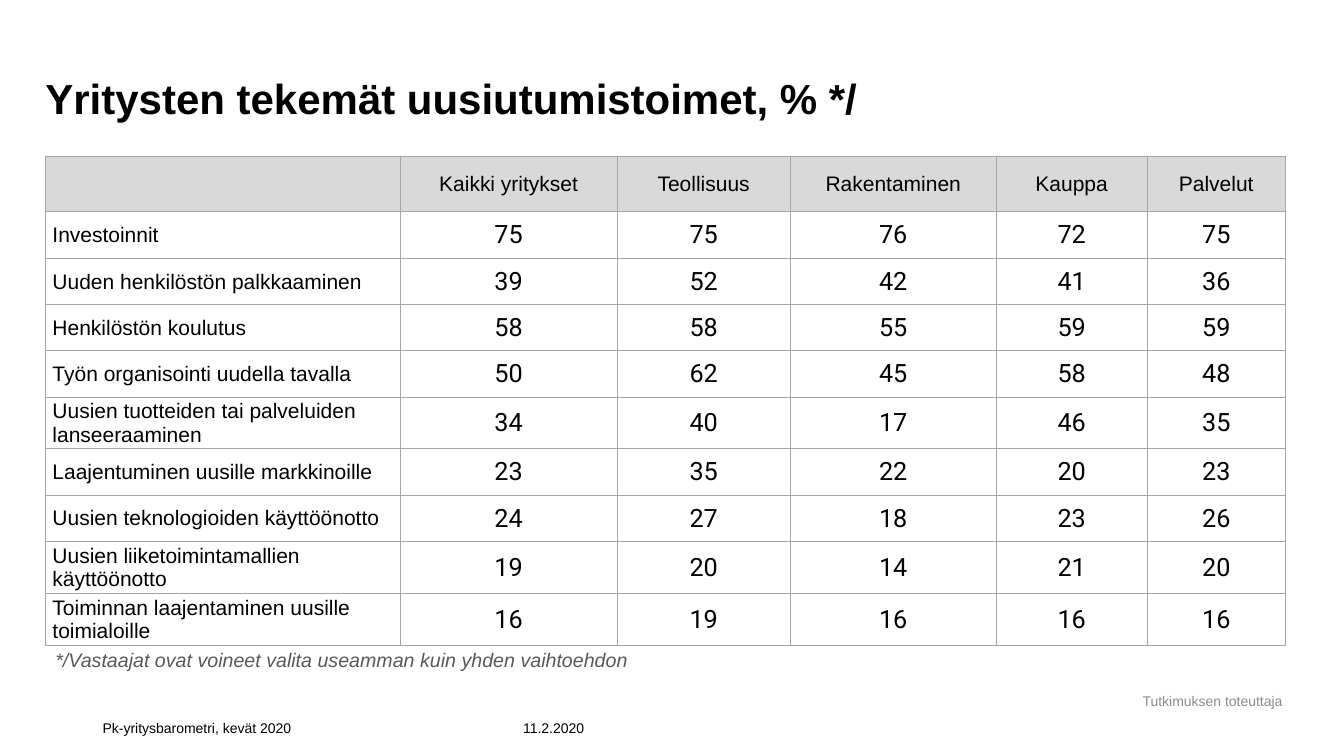
import pptx
import pptx.dml.color
import pptx.enum.text
import pptx.oxml
import pptx.oxml.ns
import pptx.util

ALIGN = pptx.enum.text.PP_ALIGN
ANCHOR = pptx.enum.text.MSO_ANCHOR
SLIDE_WIDTH = pptx.util.Inches(13.33)
SLIDE_HEIGHT = pptx.util.Inches(7.5)
MARGIN, CONTENT_WIDTH = 3.38, 92.27
FOOTER_TOP, FOOTER_HEIGHT = 93.33, 4.67

COLUMN_SHARES = [3.52, 2.15, 1.72, 2.04, 1.5, 1.37]
ROW_SHARES = [0.55] + [0.46] * 7 + [0.52, 0.46]
SECTORS = ["Kaikki yritykset", "Teollisuus", "Rakentaminen", "Kauppa", "Palvelut"]
ACTIONS = [
    ("Investoinnit", [75, 75, 76, 72, 75]),
    ("Uuden henkilöstön palkkaaminen", [39, 52, 42, 41, 36]),
    ("Henkilöstön koulutus", [58, 58, 55, 59, 59]),
    ("Työn organisointi uudella tavalla", [50, 62, 45, 58, 48]),
    ("Uusien tuotteiden tai palveluiden\nlanseeraaminen", [34, 40, 17, 46, 35]),
    ("Laajentuminen uusille markkinoille", [23, 35, 22, 20, 23]),
    ("Uusien teknologioiden käyttöönotto", [24, 27, 18, 23, 26]),
    ("Uusien liiketoimintamallien\nkäyttöönotto", [19, 20, 14, 21, 20]),
    ("Toiminnan laajentaminen uusille\ntoimialoille", [16, 19, 16, 16, 16]),
]

LABEL = {"size": 15}
FIGURE = {"size": 18, "name": "Roboto"}
SMALL = {"size": 10}


def color(value):
    return pptx.dml.color.RGBColor.from_string(value)


def place(left, top, width, height):
    return (
        round(SLIDE_WIDTH * left / 100),
        round(SLIDE_HEIGHT * top / 100),
        round(SLIDE_WIDTH * width / 100),
        round(SLIDE_HEIGHT * height / 100),
    )


def write(frame, text, look, align=ALIGN.LEFT, ink="000000"):
    frame.text = text
    for para in frame.paragraphs:
        para.alignment = align
        for span in para.runs:
            for key, value in {"name": "Arial", **look}.items():
                setattr(span.font, key, pptx.util.Pt(value) if key == "size" else value)
            span.font.color.rgb = color(ink)


def add_text(page, box, text, look, anchor, align=ALIGN.LEFT, ink="000000", wrap=True, inset=None):
    frame = page.shapes.add_textbox(*place(*box)).text_frame
    frame.word_wrap = wrap
    frame.vertical_anchor = anchor
    if inset is not None:
        for side in ("left", "top", "right", "bottom"):
            setattr(frame, f"margin_{side}", pptx.util.Inches(inset))
    write(frame, text, look, align, ink)


def add_borders(cell):
    properties = cell._tc.get_or_add_tcPr()
    for index, side in enumerate(("lnL", "lnR", "lnT", "lnB")):
        line = pptx.oxml.parse_xml(
            f'<a:{side} {pptx.oxml.ns.nsdecls("a")} w="6350"><a:solidFill>'
            f'<a:srgbClr val="A6A6A6"/></a:solidFill></a:{side}>'
        )
        properties.insert(index, line)


def fill_cell(cell, text, look, align, background):
    cell.fill.solid()
    cell.fill.fore_color.rgb = color(background)
    cell.vertical_anchor = ANCHOR.MIDDLE
    left = 0.07 if align == ALIGN.LEFT else 0.01
    for side, inset in {"left": left, "top": 0.01, "right": 0.01, "bottom": 0}.items():
        setattr(cell, f"margin_{side}", pptx.util.Inches(inset))
    write(cell.text_frame, text, look, align)
    add_borders(cell)


def add_action_table(page, box):
    left, top, width, height = place(*box)
    table = page.shapes.add_table(
        len(ROW_SHARES), len(COLUMN_SHARES), left, top, width, height
    ).table
    for column, share in zip(table.columns, COLUMN_SHARES):
        column.width = round(width * share / sum(COLUMN_SHARES))
    for row, share in zip(table.rows, ROW_SHARES):
        row.height = round(height * share / sum(ROW_SHARES))
    for row_index, (label, entries) in enumerate([("", SECTORS)] + ACTIONS):
        header = row_index == 0
        background = "D9D9D9" if header else "FFFFFF"
        fill_cell(table.cell(row_index, 0), label, LABEL, ALIGN.LEFT, background)
        for column_index, entry in enumerate(entries, 1):
            fill_cell(
                table.cell(row_index, column_index), str(entry),
                LABEL if header else FIGURE, ALIGN.CENTER, background,
            )


def add_footer(page, top, height):
    add_text(page, (6.9, top, 31.28, height), "Pk-yritysbarometri, kevät 2020", SMALL, ANCHOR.BOTTOM)
    add_text(page, (38.18, top, 6.53, height), "11.2.2020", SMALL, ANCHOR.BOTTOM)
    add_text(page, (83.72, top - 2.4, 12.98, 3.47), "Tutkimuksen toteuttaja", SMALL,
             ANCHOR.MIDDLE, ALIGN.CENTER, "8C8C8C")


def build_survey_page(deck):
    page = deck.slides.add_slide(deck.slide_layouts[6])
    add_text(page, (MARGIN, 0, CONTENT_WIDTH, 16.27), "Yritysten tekemät uusiutumistoimet, % */",
             {"size": 30, "bold": True}, ANCHOR.BOTTOM, inset=0)
    add_action_table(page, (MARGIN, 20.67, CONTENT_WIDTH, 63.33))
    add_text(page, (MARGIN, 85.07, 44.34, 8.53),
             "*/Vastaajat ovat voineet valita useamman kuin yhden vaihtoehdon",
             {"size": 14, "italic": True}, ANCHOR.TOP, ink="595959", wrap=False)
    add_footer(page, FOOTER_TOP, FOOTER_HEIGHT)


def main():
    deck = pptx.Presentation()
    deck.slide_width, deck.slide_height = SLIDE_WIDTH, SLIDE_HEIGHT
    build_survey_page(deck)
    deck.save("out.pptx")


if __name__ == "__main__":
    main()
